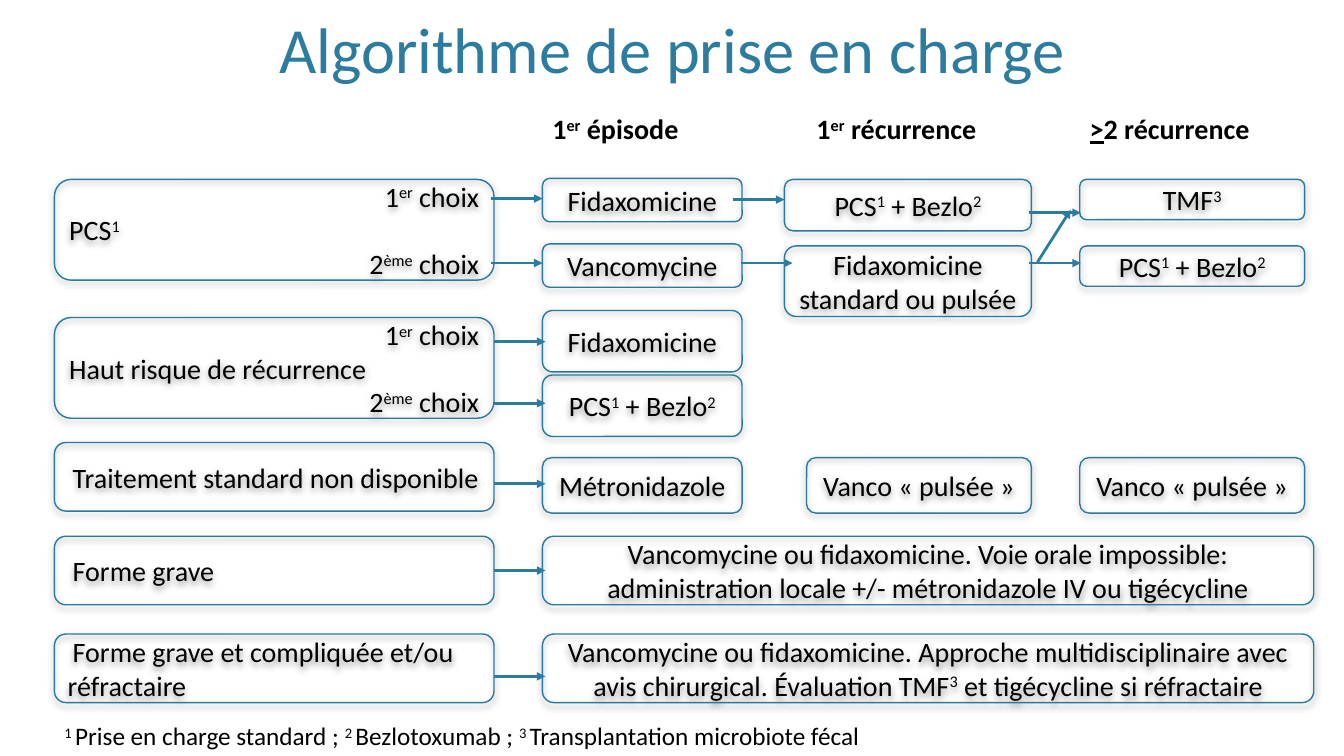
from lxml.etree import SubElement
from pptx import Presentation
from pptx.dml.color import RGBColor
from pptx.enum.shapes import MSO_CONNECTOR as Connector, MSO_SHAPE as Shape
from pptx.enum.text import MSO_ANCHOR as Anchor, PP_ALIGN as Align
from pptx.oxml import parse_xml
from pptx.oxml.ns import nsdecls, qn
from pptx.util import Inches, Pt

TEAL = RGBColor(0x2C, 0x7C, 0x9F)
OUTLINE = RGBColor(0x28, 0x7A, 0x9E)
BLACK = RGBColor(0, 0, 0)
SHADOW = (
    f'<a:effectLst {nsdecls("a")}>'
    f'<a:outerShdw blurRad="{Pt(5)}" dist="{Pt(2)}" dir="5400000" rotWithShape="0">'
    '<a:srgbClr val="000000"><a:alpha val="40000"/></a:srgbClr>'
    '</a:outerShdw></a:effectLst>'
)

CASE_LEFT, CASE_WIDTH = 0.54, 4.36
FIRST, SECOND, THIRD = 5.38, 8, 10.71
FIRST_WIDTH, WIDTH, WIDE, FULL = 1.98, 2.23, 2.45, 7.65
SECOND_WIDE = 7.78
PCS_BEZLO = "PCS^1^ + Bezlo^2"
PULSED = "Vanco «\u00a0pulsée\u00a0»".replace("\u00a0", chr(160))


class Flowchart:
    def __init__(self, page, font="Calibri", size=20):
        self.page, self.font, self.size = page, font, size

    def fill_para(self, para, text, align=Align.LEFT, size=None, bold=None, color=BLACK):
        """Fill a paragraph; text between ^ marks is raised, or underlined if it starts with _."""
        for index, part in enumerate(text.split("^")):
            if not part:
                continue
            span = para.add_run()
            span.text = part.lstrip("_")
            if part.startswith("_"):
                span.font.underline = True
            elif index % 2:
                span.font._element.set("baseline", "30000")
        para.alignment = align
        para.font.name, para.font.size = self.font, Pt(size or self.size)
        para.font.bold, para.font.color.rgb = bold, color

    def title(self, text):
        title = self.page.shapes.title
        title.left, title.top = Inches(0.8), Inches(0.12)
        title.width, title.height = Inches(11.73), Inches(0.79)
        title.text_frame.vertical_anchor = Anchor.BOTTOM
        self.fill_para(title.text_frame.paragraphs[0], text, Align.CENTER, 46, color=TEAL)

    def label(self, text, left, top, width, height, **style):
        box = self.page.shapes.add_textbox(*map(Inches, (left, top, width, height)))
        box.text_frame.word_wrap = True
        self.fill_para(box.text_frame.paragraphs[0], text, **style)

    def box(self, lines, left, top, width, height, indent=0):
        """Draw a rounded box from (text, alignment) lines."""
        box = self.page.shapes.add_shape(
            Shape.ROUNDED_RECTANGLE, *map(Inches, (left, top, width, height)))
        box.fill.background()
        box.line.color.rgb, box.line.width = OUTLINE, Pt(1)
        box._element.spPr.append(parse_xml(SHADOW))
        frame = box.text_frame
        frame.word_wrap, frame.vertical_anchor = True, Anchor.MIDDLE
        for index, (text, align) in enumerate(lines):
            para = frame.add_paragraph() if index else frame.paragraphs[0]
            if indent:
                para._p.get_or_add_pPr().set("indent", str(Inches(indent)))
            self.fill_para(para, text, align)

    def treatment(self, text, left, top, width, height):
        self.box([(text, Align.CENTER)], left, top, width, height)

    def case(self, text, top):
        self.box([(text, Align.LEFT)], CASE_LEFT, top, CASE_WIDTH, 0.68, indent=0.05)

    def choices(self, text, top):
        lines = [("1^er^ choix", Align.RIGHT), (text, Align.LEFT), ("2^ème^ choix", Align.RIGHT)]
        self.box(lines, CASE_LEFT, top, CASE_WIDTH, 1)

    def arrow(self, x, y, dx=0.51, dy=0):
        arrow = self.page.shapes.add_connector(
            Connector.STRAIGHT, *map(Inches, (x, y, x + dx, y + dy)))
        arrow.line.color.rgb, arrow.line.width = TEAL, Pt(2)
        SubElement(arrow.line._get_or_add_ln(), qn("a:tailEnd"), type="triangle")
        SubElement(arrow._element.spPr, qn("a:effectLst"))


def main():
    deck = Presentation()
    deck.slide_width, deck.slide_height = Inches(13.33), Inches(7.5)
    chart = Flowchart(deck.slides.add_slide(deck.slide_layouts[5]))
    chart.title("Algorithme de prise en charge")

    for text, left in (("1^er^ épisode", FIRST), ("1^er^ récurrence", SECOND),
                       ("^_>^2 récurrence", THIRD)):
        chart.label(text, left, 1.06, WIDTH, 0.44, bold=True)

    chart.choices("PCS^1", 1.78)
    chart.choices("Haut risque de récurrence", 3.15)
    for text, top in (("Traitement standard non disponible", 4.39), ("Forme grave", 5.32),
                      ("Forme grave et compliquée et/ou réfractaire", 6.29)):
        chart.case(text, top)

    for treatment in (
        ("Fidaxomicine", FIRST, 1.77, FIRST_WIDTH, 0.43),
        ("Vancomycine", FIRST, 2.42, FIRST_WIDTH, 0.43),
        (PCS_BEZLO, SECOND_WIDE, 1.78, WIDE, 0.51),
        ("Fidaxomicine standard ou pulsée", SECOND_WIDE, 2.44, WIDE, 0.7),
        ("TMF^3", THIRD, 1.78, WIDTH, 0.4),
        (PCS_BEZLO, THIRD, 2.44, WIDTH, 0.4),
        ("Fidaxomicine", FIRST, 3.08, FIRST_WIDTH, 0.61),
        (PCS_BEZLO, FIRST, 3.72, FIRST_WIDTH, 0.61),
        ("Métronidazole", FIRST, 4.54, FIRST_WIDTH, 0.55),
        (PULSED, SECOND, 4.54, WIDTH, 0.55),
        (PULSED, THIRD, 4.54, WIDTH, 0.55),
        ("Vancomycine ou fidaxomicine. Voie orale impossible: administration locale "
         "+/- métronidazole IV ou tigécycline", FIRST, 5.32, FULL, 0.68),
        ("Vancomycine ou fidaxomicine. Approche multidisciplinaire avec avis chirurgical. "
         "Évaluation TMF^3^ et tigécycline si réfractaire", FIRST, 6.29, FULL, 0.68),
    ):
        chart.treatment(*treatment)

    for x, y in ((4.87, 1.97), (4.87, 2.61), (7.27, 1.98), (7.35, 2.61),
                 (10.21, 2.11), (10.21, 2.61)):
        chart.arrow(x, y)
    for y in (3.39, 4, 4.8, 5.66, 6.71):
        chart.arrow(4.9, y)
    chart.arrow(10.29, 2.6, 0.33, -0.52)

    chart.label("^1 ^Prise en charge standard ; ^2 ^Bezlotoxumab ; "
                "^3 ^Transplantation microbiote fécal", CASE_LEFT, 7.1, 10.08, 0.4, size=18)
    deck.save("out.pptx")


if __name__ == "__main__":
    main()
